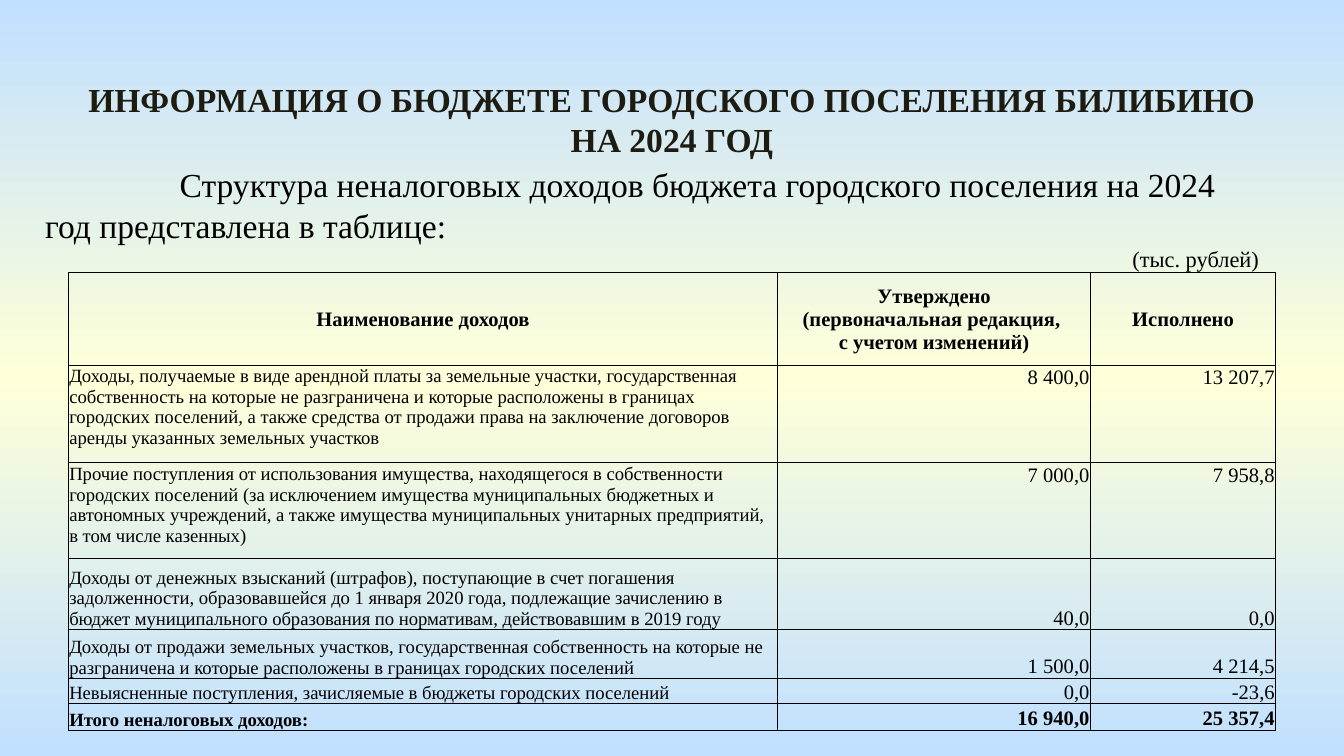
from copy import deepcopy

from lxml import etree
from pptx import Presentation
from pptx.dml.color import RGBColor
from pptx.enum.text import MSO_ANCHOR, MSO_AUTO_SIZE, PP_ALIGN
from pptx.oxml.ns import qn
from pptx.util import Cm, Pt

LEFT, CENTER, RIGHT = PP_ALIGN.LEFT, PP_ALIGN.CENTER, PP_ALIGN.RIGHT
TOP, MIDDLE, BOTTOM = MSO_ANCHOR.TOP, MSO_ANCHOR.MIDDLE, MSO_ANCHOR.BOTTOM
FONT = "Times New Roman"
COLORS = {"sky": "C1E0FF", "cream": "FFFFD9", "title": "1E1C11", "black": "000000"}

HEADERS = ["Наименование доходов",
           "Утверждено\n(первоначальная редакция, \nс учетом изменений)",
           "Исполнено"]
INCOME = [
    ("Доходы, получаемые в виде арендной платы за земельные участки, государственная "
     "собственность на которые не разграничена и которые расположены в границах "
     "городских поселений, а также средства от продажи права на заключение договоров "
     "аренды указанных земельных участков", "8 400,0", "13 207,7"),
    ("Прочие поступления от использования имущества, находящегося в собственности "
     "городских поселений (за исключением имущества муниципальных бюджетных и "
     "автономных учреждений, а также имущества муниципальных унитарных предприятий, "
     "в том числе казенных)", "7 000,0", "7 958,8"),
    ("Доходы от денежных взысканий (штрафов), поступающие в счет погашения "
     "задолженности, образовавшейся до 1 января 2020 года, подлежащие зачислению в "
     "бюджет муниципального образования по нормативам, действовавшим в 2019 году",
     "40,0", "0,0"),
    ("Доходы от продажи земельных участков, государственная собственность на которые не "
     "разграничена и которые расположены в границах городских поселений",
     "1 500,0", "4 214,5"),
    ("Невыясненные поступления, зачисляемые в бюджеты городских поселений",
     "0,0", "-23,6"),
    ("Итого неналоговых доходов:", "16 940,0", "25 357,4"),
]
COL_WIDTHS = [13.41, 5.91, 3.5]
ROW_HEIGHTS = [1.75, 1.85, 1.8, 1.35, 0.92, 0.48, 0.5]


def write(p, text, size=18, bold=False, color="black", align=LEFT):
    p.alignment = align
    p.space_before = Pt(0)
    for i, line in enumerate(text.split("\n")):
        if i:
            p.add_line_break()
            p._p[-1].append(deepcopy(r._r.rPr))
        r = p.add_run()
        r.text = line
        r.font.name, r.font.size, r.font.bold = FONT, Pt(size), bold
        r.font.color.rgb = RGBColor.from_string(COLORS[color])


class BudgetSlide:
    def __init__(self, prs):
        self.s = prs.slides.add_slide(prs.slide_layouts[1])

    def background(self):
        fill = self.s.background.fill
        fill.gradient()
        fill.gradient_angle = 270
        for stop, color, position in zip(fill.gradient_stops, ("sky", "cream"), (0, 0.5)):
            stop.color.rgb = RGBColor.from_string(COLORS[color])
            stop.position = position
        stops = next(self.s._element.iter(qn("a:gsLst")))
        end = deepcopy(stops[0])
        end.set("pos", "100000")
        stops.append(end)

    def place(self, sp, left, top, width, height, anchor):
        sp.left, sp.top, sp.width, sp.height = map(Cm, (left, top, width, height))
        tf = sp.text_frame
        tf.word_wrap = True
        tf.auto_size = MSO_AUTO_SIZE.NONE
        tf.vertical_anchor = anchor
        return tf

    def title(self, text, *box):
        tf = self.place(self.s.shapes.title, *box, MIDDLE)
        write(tf.paragraphs[0], text, bold=True, color="title", align=CENTER)

    def body(self, text, unit, *box):
        tf = self.place(self.s.placeholders[1], *box, TOP)
        intro, note = tf.paragraphs[0], tf.add_paragraph()
        write(intro, text)
        write(note, unit, size=12, align=RIGHT)
        for p, indent in ((intro, Cm(2.54)), (note, 0)):
            pPr = p._p.get_or_add_pPr()
            pPr.set("marL", "0")
            pPr.set("indent", str(indent))
            etree.SubElement(pPr, qn("a:buNone"))

    def cell(self, cell, text, anchor, **style):
        tcPr = cell._tc.get_or_add_tcPr()
        for side in ("lnL", "lnR", "lnT", "lnB"):
            ln = etree.SubElement(tcPr, qn("a:" + side), w=str(Pt(0.5)))
            solid = etree.SubElement(ln, qn("a:solidFill"))
            etree.SubElement(solid, qn("a:srgbClr"), val=COLORS["black"])
        cell.fill.background()
        cell.margin_left = cell.margin_right = cell.margin_top = Cm(0.02)
        cell.margin_bottom = 0
        cell.vertical_anchor = anchor
        write(cell.text_frame.paragraphs[0], text, **style)

    def table(self, left, top):
        rows = [HEADERS, *INCOME]
        frame = self.s.shapes.add_table(len(rows), len(HEADERS), Cm(left), Cm(top),
                                        Cm(sum(COL_WIDTHS)), Cm(sum(ROW_HEIGHTS)))
        table = frame.table
        table.first_row = table.horz_banding = False
        for column, width in zip(table.columns, COL_WIDTHS):
            column.width = Cm(width)
        for i, (row, height) in enumerate(zip(rows, ROW_HEIGHTS)):
            table.rows[i].height = Cm(height)
            anchor = MIDDLE if i == 0 else TOP if i < 3 else BOTTOM
            for j, text in enumerate(row):
                self.cell(table.cell(i, j), text, anchor,
                          size=10 if i and j == 0 else 11,
                          bold=i in (0, len(rows) - 1),
                          align=CENTER if i == 0 else RIGHT if j else LEFT)


def main():
    prs = Presentation()
    prs.slide_width, prs.slide_height = Cm(25.4), Cm(14.29)
    slide = BudgetSlide(prs)
    slide.background()
    slide.title("ИНФОРМАЦИЯ О БЮДЖЕТЕ ГОРОДСКОГО ПОСЕЛЕНИЯ БИЛИБИНО НА 2024 ГОД",
                1, 1.35, 23.4, 1.8)
    slide.body("Структура неналоговых доходов бюджета городского поселения на 2024 год "
               "представлена в таблице:", "(тыс. рублей)", 0.6, 2.98, 23.45, 3.07)
    slide.table(1.29, 5.15)
    prs.save("out.pptx")


if __name__ == "__main__":
    main()
